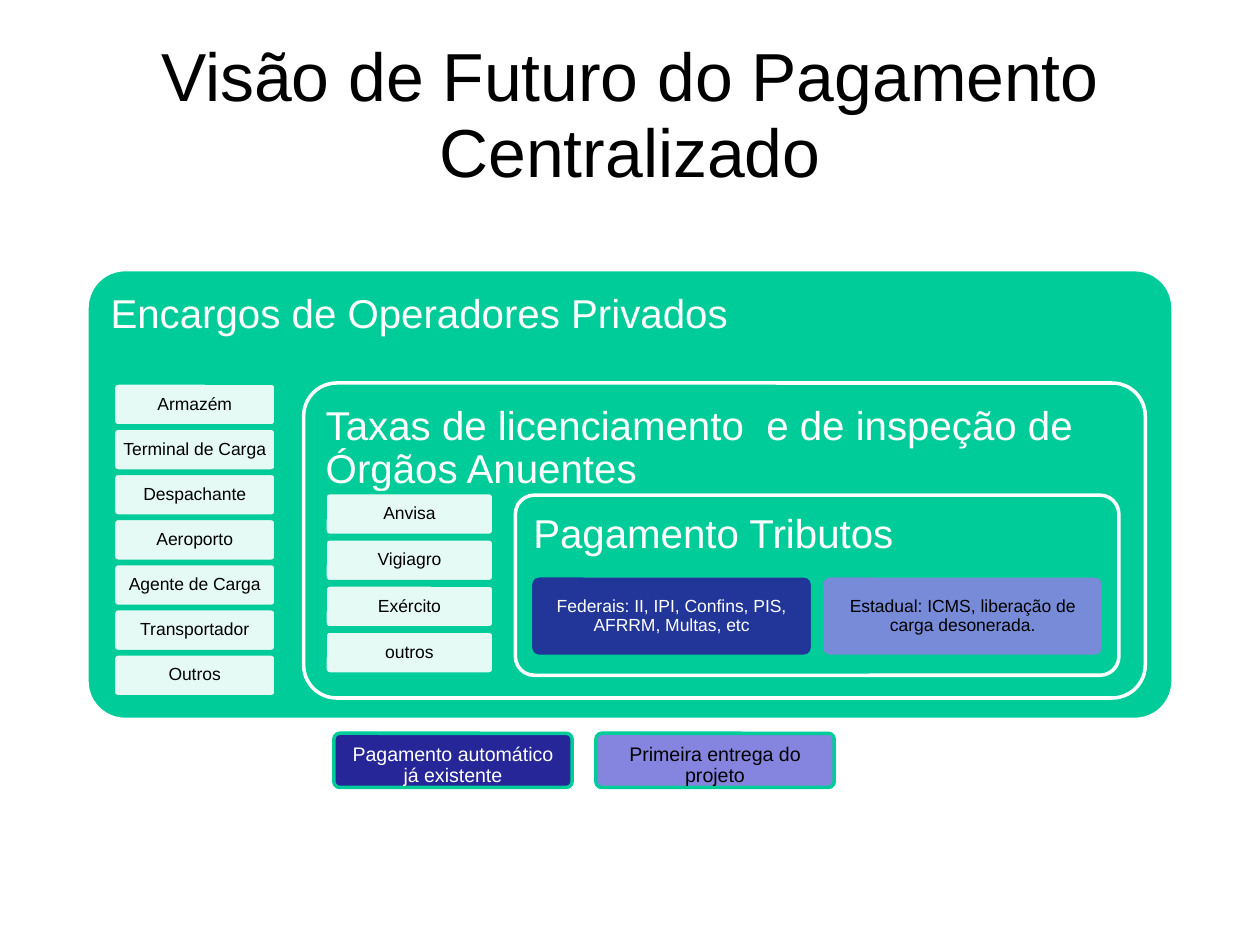
from lxml import etree
from pptx import Presentation
from pptx.dml.color import RGBColor
from pptx.enum.shapes import MSO_SHAPE
from pptx.enum.text import MSO_ANCHOR, PP_ALIGN
from pptx.oxml.ns import qn
from pptx.util import Inches, Pt

ROUND = MSO_SHAPE.ROUNDED_RECTANGLE
TOP, MIDDLE = MSO_ANCHOR.TOP, MSO_ANCHOR.MIDDLE
LEFT, CENTER = PP_ALIGN.LEFT, PP_ALIGN.CENTER

BLACK = RGBColor(0x00, 0x00, 0x00)
WHITE = RGBColor(0xFF, 0xFF, 0xFF)
GREEN = RGBColor(0x00, 0xCC, 0x99)
NAVY = RGBColor(0x26, 0x26, 0x99)
LILAC = RGBColor(0x85, 0x85, 0xE0)


class Board:
    font = "Arial"

    def __init__(self, slide):
        self.slide = slide

    def label(self, shape, text, size, color, align, anchor, pads, spacing=0.9):
        frame = shape.text_frame
        frame.word_wrap = True
        frame.vertical_anchor = anchor
        (frame.margin_left, frame.margin_top,
         frame.margin_right, frame.margin_bottom) = [Inches(p) for p in pads]
        frame.text = text
        par = frame.paragraphs[0]
        par.alignment = align
        par.line_spacing = spacing
        font = par.runs[0].font
        font.name, font.size, font.color.rgb = self.font, Pt(size), color

    def title(self, box, text):
        shape = self.slide.shapes.add_textbox(*[Inches(v) for v in box])
        self.label(shape, text, 38.8, BLACK, CENTER, MIDDLE,
                   (0.1, 0.05, 0.1, 0.05), 0.93)

    def block(self, box, fill, line, curve=0.105, alpha=100):
        shape = self.slide.shapes.add_shape(ROUND, *[Inches(v) for v in box])
        shape.shadow.inherit = False
        shape.adjustments[0] = curve
        shape.fill.solid()
        shape.fill.fore_color.rgb = fill
        if alpha < 100:
            tint = shape.element.spPr.find(qn("a:solidFill")).find(qn("a:srgbClr"))
            etree.SubElement(tint, qn("a:alpha"), val=str(alpha * 1000))
        shape.line.color.rgb = line
        shape.line.width = Pt(2)
        return shape

    def panel(self, box, text, curve=0.105):
        shape = self.block(box, GREEN, WHITE, curve)
        self.label(shape, text, 23, WHITE, LEFT, TOP, [0.1] * 4)

    def tag(self, box, text, fill=WHITE, color=BLACK):
        shape = self.block(box, fill, GREEN, alpha=90)
        self.label(shape, text, 10, color, CENTER, MIDDLE, [0.04] * 4)

    def column(self, left, first, last, width, names):
        step = (last - first) / (len(names) - 1)
        for i, name in enumerate(names):
            self.tag((left, first + i * step, width, 0.34), name)

    def legend(self, box, text, fill, color):
        shape = self.block(box, fill, GREEN)
        self.label(shape, text, 11.2, color, CENTER, MIDDLE,
                   (0.1, 0.11, 0.1, 0.03))


def main():
    deck = Presentation()
    deck.slide_width, deck.slide_height = Inches(10), Inches(7.5)
    board = Board(deck.slides.add_slide(deck.slide_layouts[6]))

    board.title((0.5, 0.3, 9, 1.25), "Visão de Futuro do Pagamento Centralizado")

    # Outer panel: private operators
    board.panel((0.69, 2.14, 8.62, 3.57), "Encargos de Operadores Privados", 0.085)
    board.column(0.9, 3.04, 5.19, 1.29, [
        "Armazém", "Terminal de Carga", "Despachante", "Aeroporto",
        "Agente de Carga", "Transportador", "Outros"])

    # Middle panel: licensing agencies
    board.panel((2.41, 3.04, 6.68, 2.5),
                "Taxas de licenciamento  e de inspeção de Órgãos Anuentes")
    board.column(2.58, 3.91, 5.01, 1.34,
                 ["Anvisa", "Vigiagro", "Exército", "outros"])

    # Inner panel: taxes
    board.panel((4.09, 3.93, 4.79, 1.43), "Pagamento Tributos")
    board.tag((4.21, 4.57, 2.24, 0.64),
              "Federais: II, IPI, Confins, PIS, AFRRM, Multas, etc", NAVY, WHITE)
    board.tag((6.52, 4.57, 2.24, 0.64),
              "Estadual: ICMS, liberação de carga desonerada.", LILAC)

    # Legend
    board.legend((2.65, 5.82, 1.89, 0.43),
                 "Pagamento automático já existente", NAVY, WHITE)
    board.legend((4.73, 5.82, 1.89, 0.43),
                 "Primeira entrega do projeto", LILAC, BLACK)

    deck.save("out.pptx")


if __name__ == "__main__":
    main()
